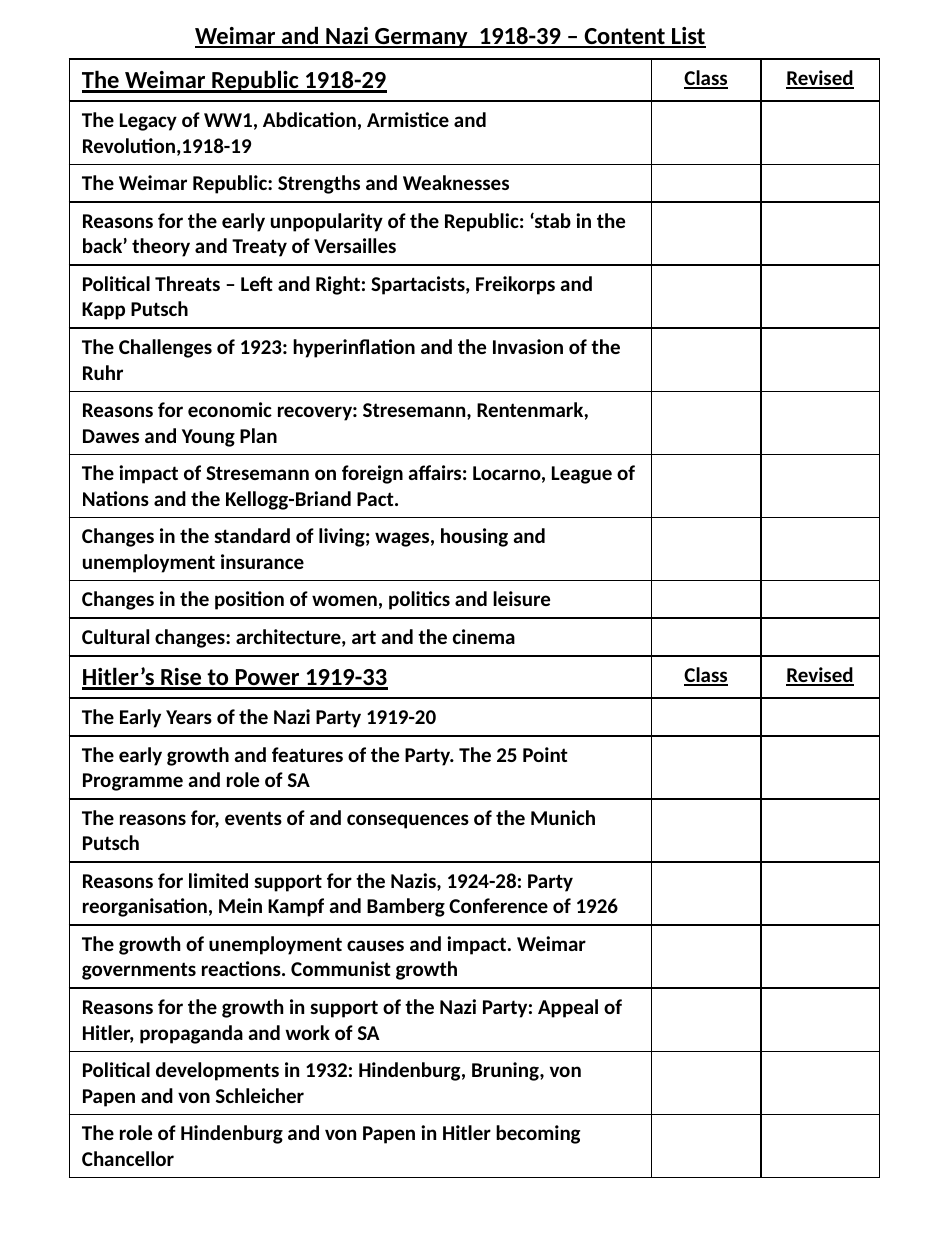
from lxml.etree import SubElement
from pptx import Presentation
from pptx.dml.color import RGBColor
from pptx.enum.text import MSO_AUTO_SIZE, PP_ALIGN
from pptx.oxml import parse_xml
from pptx.oxml.ns import nsdecls, qn
from pptx.util import Pt

BLACK = RGBColor(0, 0, 0)
WHITE = RGBColor(255, 255, 255)
BODY_SIZE = Pt(12)
HEADING_SIZE = Pt(14)
COLUMN_WIDTHS = (332.6, 62.6, 67.7)
ROW_HEIGHT = 18.7

TITLE = "Weimar and Nazi Germany  1918-39 – Content List"
CHECK_HEADINGS = ("Class", "Revised")

# Each section: heading, topics on the second outline level, topics on the first
SECTIONS = [
    ("The Weimar Republic 1918-29", [
        "The Legacy of WW1, Abdication, Armistice and Revolution,1918-19",
        "The Weimar Republic: Strengths and Weaknesses",
        "Reasons for the early unpopularity of the Republic: ‘stab in the back’ theory and Treaty of Versailles",
        "Political Threats – Left and Right: Spartacists, Freikorps and Kapp Putsch",
        "The Challenges of 1923: hyperinflation and the Invasion of the Ruhr",
        "Reasons for economic recovery: Stresemann, Rentenmark, Dawes and Young Plan",
        "The impact of Stresemann on foreign affairs: Locarno, League of Nations and the Kellogg-Briand Pact.",
    ], [
        "Changes in the standard of living; wages, housing and unemployment insurance",
        "Changes in the position of women, politics and leisure",
        "Cultural changes: architecture, art and the cinema",
    ]),
    ("Hitler’s Rise to Power 1919-33", [
        "The Early Years of the Nazi Party 1919-20",
        "The early growth and features of the Party. The 25 Point Programme and role of SA",
        "The reasons for, events of and consequences of the Munich Putsch",
        "Reasons for limited support for the Nazis, 1924-28: Party reorganisation, Mein Kampf and Bamberg Conference of 1926",
        "The growth of unemployment causes and impact. Weimar governments reactions. Communist growth",
    ], [
        "Reasons for the growth in support of the Nazi Party: Appeal of Hitler, propaganda and work of SA",
        "Political developments in 1932: Hindenburg, Bruning, von Papen and von Schleicher",
        "The role of Hindenburg and von Papen in Hitler becoming Chancellor",
    ]),
]


def write(para, text, size=BODY_SIZE, underline=False):
    span = para.add_run()
    span.text = text
    formats = {"name": "Calibri", "size": size, "bold": True, "underline": underline}
    for name, value in formats.items():
        setattr(span.font, name, value)
    span.font.color.rgb = BLACK


def add_title(page):
    box = page.shapes.add_textbox(Pt(104.4), Pt(7.9), Pt(308.2), Pt(24.5))
    box.text_frame.word_wrap = False
    box.text_frame.auto_size = MSO_AUTO_SIZE.SHAPE_TO_FIT_TEXT
    write(box.text_frame.paragraphs[0], TITLE, HEADING_SIZE, underline=True)


def style_cell(cell):
    cell.fill.solid()
    cell.fill.fore_color.rgb = WHITE
    # Borders come before the fill in the cell properties
    properties = cell._tc.get_or_add_tcPr()
    for index, side in enumerate(("lnL", "lnR", "lnT", "lnB")):
        properties.insert(index, parse_xml(
            f'<a:{side} {nsdecls("a")} w="{Pt(1)}"><a:solidFill>'
            f'<a:srgbClr val="{BLACK}"/></a:solidFill></a:{side}>'))


def set_empty(cell):
    # Keeps blank tick boxes from forcing taller rows
    para = cell.text_frame.paragraphs[0]
    SubElement(para._p, qn("a:endParaRPr"), sz=str(int(BODY_SIZE.pt * 100)))


def fill_heading_row(cells, heading):
    write(cells[0].text_frame.paragraphs[0], heading, HEADING_SIZE, underline=True)
    for cell, label in zip(cells[1:], CHECK_HEADINGS):
        para = cell.text_frame.paragraphs[0]
        para.alignment = PP_ALIGN.CENTER
        write(para, label, underline=True)


def fill_topic_row(cells, topic, level):
    para = cells[0].text_frame.paragraphs[0]
    if level:
        para.level = level
        properties = para._p.get_or_add_pPr()
        for name in ("marL", "indent"):
            properties.set(name, "0")
    write(para, topic)
    for cell in cells[1:]:
        set_empty(cell)


def add_checklist(page):
    rows = []
    for heading, inner_topics, outer_topics in SECTIONS:
        rows.append((heading, None))
        rows += [(topic, 1) for topic in inner_topics]
        rows += [(topic, 0) for topic in outer_topics]

    frame = page.shapes.add_table(len(rows), len(COLUMN_WIDTHS), Pt(39.6), Pt(33.8),
                                  Pt(sum(COLUMN_WIDTHS)), Pt(638.6))
    table = frame.table
    table.first_row = table.horz_banding = False
    for column, width in zip(table.columns, COLUMN_WIDTHS):
        column.width = Pt(width)

    for row, (text, level) in zip(table.rows, rows):
        row.height = Pt(ROW_HEIGHT)
        cells = list(row.cells)
        for cell in cells:
            style_cell(cell)
        if level is None:
            fill_heading_row(cells, text)
        else:
            fill_topic_row(cells, text, level)
    frame.height = Pt(638.6)


def main():
    deck = Presentation()
    deck.slide_width, deck.slide_height = Pt(540), Pt(720)
    page = deck.slides.add_slide(deck.slide_layouts[6])
    add_title(page)
    add_checklist(page)
    deck.save("out.pptx")


if __name__ == "__main__":
    main()
